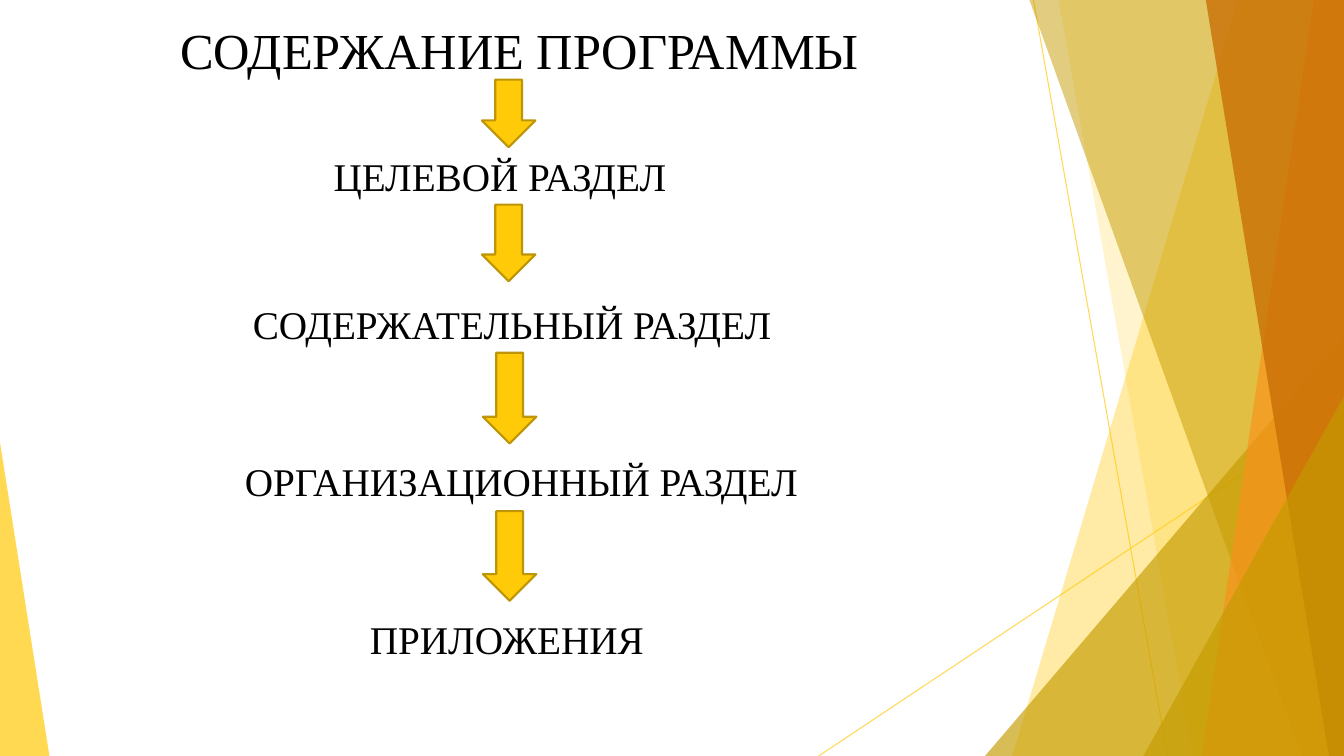
from lxml import etree
from pptx import Presentation
from pptx.dml.color import RGBColor
from pptx.enum import shapes, text
from pptx.oxml import ns
from pptx.util import Inches, Pt

YELLOW = RGBColor(0xFF, 0xCA, 0x08)
OCHRE = RGBColor(0xC5, 0x9B, 0x00)
ORANGE = RGBColor(0xF8, 0x93, 0x1D)
RUST = RGBColor(0xCA, 0x6F, 0x06)
OUTLINE = RGBColor(0xBD, 0x95, 0x06)
BLACK = RGBColor(0, 0, 0)
WIDTH, HEIGHT = 13.33, 7.5


class SlideBuilder:
    font = "Times New Roman"

    def __init__(self, slide):
        self.s = slide

    def set_alpha(self, sp, percent):
        """Make the only colour set on a shape or line partly transparent."""
        clr = next(sp._element.spPr.iter(ns.qn("a:srgbClr")))
        etree.SubElement(clr, ns.qn("a:alpha")).set("val", str(percent * 1000))

    def fill(self, sp, color, alpha=None):
        sp.shadow.inherit = False
        sp.fill.solid()
        sp.fill.fore_color.rgb = color
        if alpha is not None:
            sp.line.fill.background()
            self.set_alpha(sp, alpha)

    def line(self, x1, y1, x2, y2):
        c = self.s.shapes.add_connector(
            shapes.MSO_CONNECTOR.STRAIGHT, *map(Inches, (x1, y1, x2, y2)))
        c.line.color.rgb = YELLOW
        c.line.width = Pt(0.75)
        self.set_alpha(c, 70)
        etree.SubElement(c._element.spPr, ns.qn("a:effectLst"))

    def band(self, top_x, bottom_x, color, alpha):
        """Fill everything between a slanted edge and the slide's right side."""
        corners = [(WIDTH, 0), (WIDTH, HEIGHT), (bottom_x, HEIGHT)]
        fb = self.s.shapes.build_freeform(Inches(top_x), 0)
        fb.add_line_segments([(Inches(x), Inches(y)) for x, y in corners])
        self.fill(fb.convert_to_shape(), color, alpha)

    def triangle(self, left, top, width, apex, color, alpha):
        """Draw a triangle that stands on the slide's bottom edge."""
        sp = self.s.shapes.add_shape(
            shapes.MSO_SHAPE.ISOSCELES_TRIANGLE,
            *map(Inches, (left, top, width, HEIGHT - top)))
        sp.adjustments[0] = apex
        self.fill(sp, color, alpha)

    def arrow(self, left, top, height):
        sp = self.s.shapes.add_shape(
            shapes.MSO_SHAPE.DOWN_ARROW,
            *map(Inches, (left, top, 0.53, height)))
        self.fill(sp, YELLOW)
        sp.line.color.rgb = OUTLINE
        sp.line.width = Pt(1.5)

    def label(self, words, left, top, width, height=0.57, size=28):
        tb = self.s.shapes.add_textbox(*map(Inches, (left, top, width, height)))
        tf = tb.text_frame
        tf.word_wrap = True
        tf.auto_size = text.MSO_AUTO_SIZE.SHAPE_TO_FIT_TEXT
        p = tf.paragraphs[0]
        p.text = words
        p.font.name = self.font
        p.font.size = Pt(size)
        p.font.color.rgb = BLACK


def main():
    prs = Presentation()
    prs.slide_width, prs.slide_height = Inches(WIDTH), Inches(HEIGHT)
    b = SlideBuilder(prs.slides.add_slide(prs.slide_layouts[6]))

    b.line(10.25, 0, 11.58, HEIGHT)
    b.line(WIDTH, 4.03, 8.12, HEIGHT)
    b.band(12.28, 10.04, YELLOW, 36)
    b.band(10.5, 11.83, YELLOW, 20)
    b.triangle(9.77, 3.33, 3.56, 1, OCHRE, 66)
    b.band(10.21, 12.91, OCHRE, 50)
    b.band(13.03, 11.92, ORANGE, 70)
    b.band(11.96, 13.18, RUST, 80)
    b.triangle(11.34, 3.93, 1.99, 1, OCHRE, 66)
    b.triangle(0, 4.39, 0.49, 0, YELLOW, 70)

    b.label("СОДЕРЖАНИЕ ПРОГРАММЫ", 1.69, 0.14, 9.68, 0.71, 36)
    sections = [
        ("ЦЕЛЕВОЙ РАЗДЕЛ", (3.21, 1.46, 5.49), (4.78, 0.79, 0.67)),
        ("СОДЕРЖАТЕЛЬНЫЙ РАЗДЕЛ", (2.41, 2.93, 5.82), (4.78, 2.03, 0.76)),
        ("ОРГАНИЗАЦИОННЫЙ РАЗДЕЛ", (2.33, 4.49, 5.9), (4.79, 3.5, 0.9)),
        ("ПРИЛОЖЕНИЯ", (3.57, 6.06, 4.51), (4.79, 5.07, 0.89)),
    ]
    for words, label_box, arrow_box in sections:
        b.arrow(*arrow_box)
        b.label(words, *label_box)

    prs.save("out.pptx")


if __name__ == "__main__":
    main()
